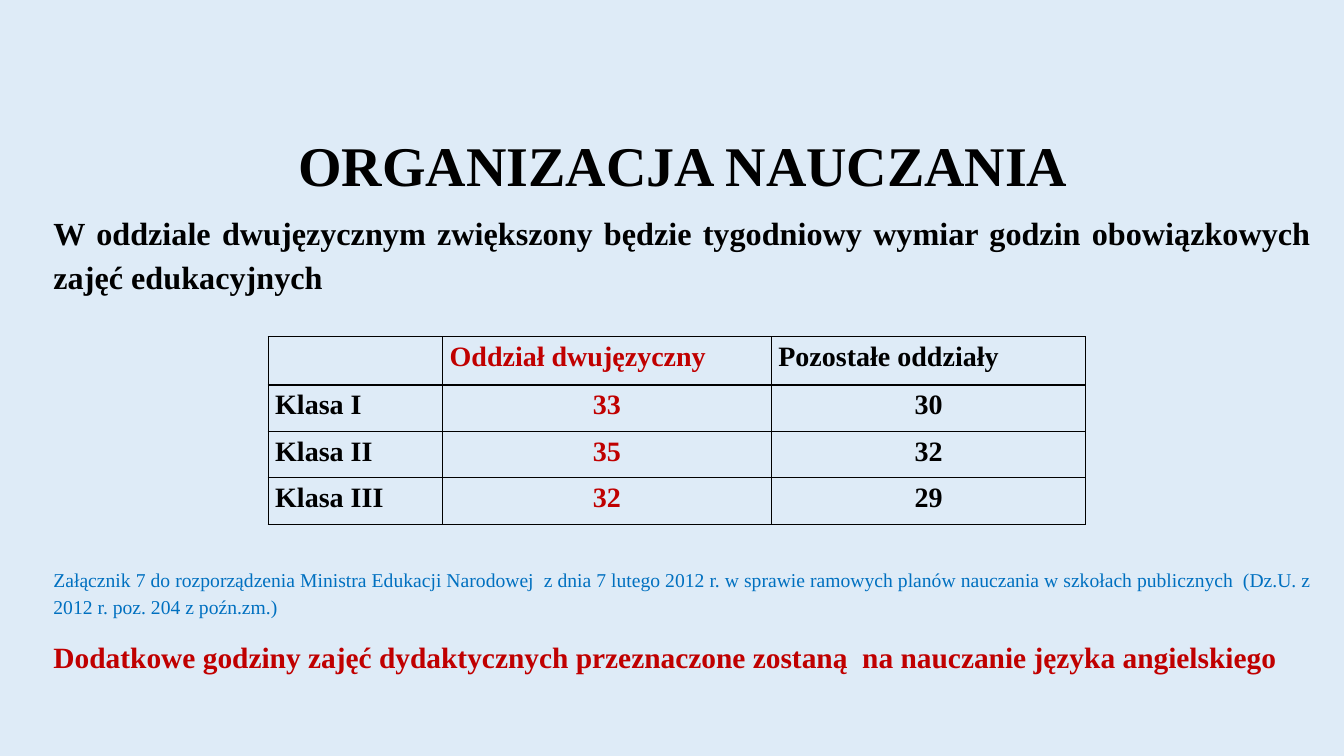
import dataclasses

import lxml.etree
import pptx
import pptx.dml.color
import pptx.enum.text
import pptx.oxml.ns
import pptx.util

Inches = pptx.util.Inches
Pt = pptx.util.Pt
Align = pptx.enum.text.PP_ALIGN
FONT = "Times New Roman"
HUES = {"back": "DEEBF7", "ink": "000000", "red": "C00000", "blue": "0070C0"}


@dataclasses.dataclass
class Block:
    text: str
    top: float
    high: float
    size: int
    hue: str = "ink"
    bold: bool = True
    align: Align = Align.JUSTIFY


TITLE = Block("ORGANIZACJA NAUCZANIA", 1.19, 0.75, 40, align=Align.CENTER)
BLOCKS = [
    Block("W oddziale dwujęzycznym zwiększony będzie tygodniowy wymiar godzin "
          "obowiązkowych zajęć edukacyjnych", 2.06, 0.9, 23),
    Block("Załącznik 7 do rozporządzenia Ministra Edukacji Narodowej  z dnia "
          "7 lutego 2012 r. w sprawie ramowych planów nauczania w szkołach "
          "publicznych  (Dz.U. z 2012 r. poz. 204 z poźn.zm.)",
          5.6, 0.55, 14, "blue", False),
    Block("Dodatkowe godziny zajęć dydaktycznych przeznaczone zostaną  na "
          "nauczanie języka angielskiego", 6.29, 0.45, 21, "red"),
]
ROWS = [
    ("", "Oddział dwujęzyczny", "Pozostałe oddziały"),
    ("Klasa I", "33", "30"),
    ("Klasa II", "35", "32"),
    ("Klasa III", "32", "29"),
]
WIDTHS = (1.73, 3.26, 3.12)
HEIGHTS = (0.48, 0.46, 0.46, 0.46)


def tint(name: str) -> pptx.dml.color.RGBColor:
    return pptx.dml.color.RGBColor.from_string(HUES[name])


def write(frame, text: str, size: int, hue: str, bold: bool, align: Align) -> None:
    para = frame.paragraphs[0]
    para.alignment = align
    para.line_spacing = 1.15
    para.space_before = Pt(0)
    para.space_after = Pt(10)
    para.font.size = Pt(size)
    if text:
        run = para.add_run()
        run.text = text
        run.font.name = FONT
        run.font.size = Pt(size)
        run.font.bold = bold
        run.font.color.rgb = tint(hue)


def place(shape, block: Block) -> None:
    shape.left, shape.top = Inches(0.53), Inches(block.top)
    shape.width, shape.height = Inches(12.49), Inches(block.high)
    frame = shape.text_frame
    frame.word_wrap = True
    frame.auto_size = pptx.enum.text.MSO_AUTO_SIZE.NONE
    frame.vertical_anchor = pptx.enum.text.MSO_ANCHOR.TOP
    frame.margin_left = frame.margin_right = 0
    frame.margin_top = frame.margin_bottom = 0
    write(frame, block.text, block.size, block.hue, block.bold, block.align)


def edge(cell) -> None:
    props = cell._tc.get_or_add_tcPr()
    for spot, side in enumerate(("lnL", "lnR", "lnT", "lnB")):
        line = lxml.etree.Element(pptx.oxml.ns.qn("a:" + side), w=str(Pt(1)))
        fill = lxml.etree.SubElement(line, pptx.oxml.ns.qn("a:solidFill"))
        lxml.etree.SubElement(fill, pptx.oxml.ns.qn("a:srgbClr"), val=HUES["ink"])
        props.insert(spot, line)


def grid(slide) -> None:
    table = slide.shapes.add_table(
        len(ROWS), len(WIDTHS), Inches(2.66), Inches(3.34),
        Inches(sum(WIDTHS)), Inches(sum(HEIGHTS))).table
    table.horz_banding = False
    for col, wide in zip(table.columns, WIDTHS):
        col.width = Inches(wide)
    for row, high in zip(table.rows, HEIGHTS):
        row.height = Inches(high)
    for r, texts in enumerate(ROWS):
        for c, text in enumerate(texts):
            cell = table.cell(r, c)
            cell.fill.background()
            cell.margin_left = cell.margin_right = Inches(0.07)
            cell.margin_top = cell.margin_bottom = 0
            hue = "red" if c == 1 else "ink"
            align = Align.CENTER if r and c else Align.LEFT
            write(cell.text_frame, text, 20, hue, True, align)
            edge(cell)


def main() -> None:
    deck = pptx.Presentation()
    deck.slide_width, deck.slide_height = Inches(13.33), Inches(7.5)
    slide = deck.slides.add_slide(deck.slide_layouts[5])
    slide.background.fill.solid()
    slide.background.fill.fore_color.rgb = tint("back")

    # Heading and text
    place(slide.shapes.title, TITLE)
    for block in BLOCKS:
        place(slide.shapes.add_textbox(0, 0, 0, 0), block)

    # Weekly hours
    grid(slide)
    deck.save("out.pptx")


if __name__ == "__main__":
    main()
